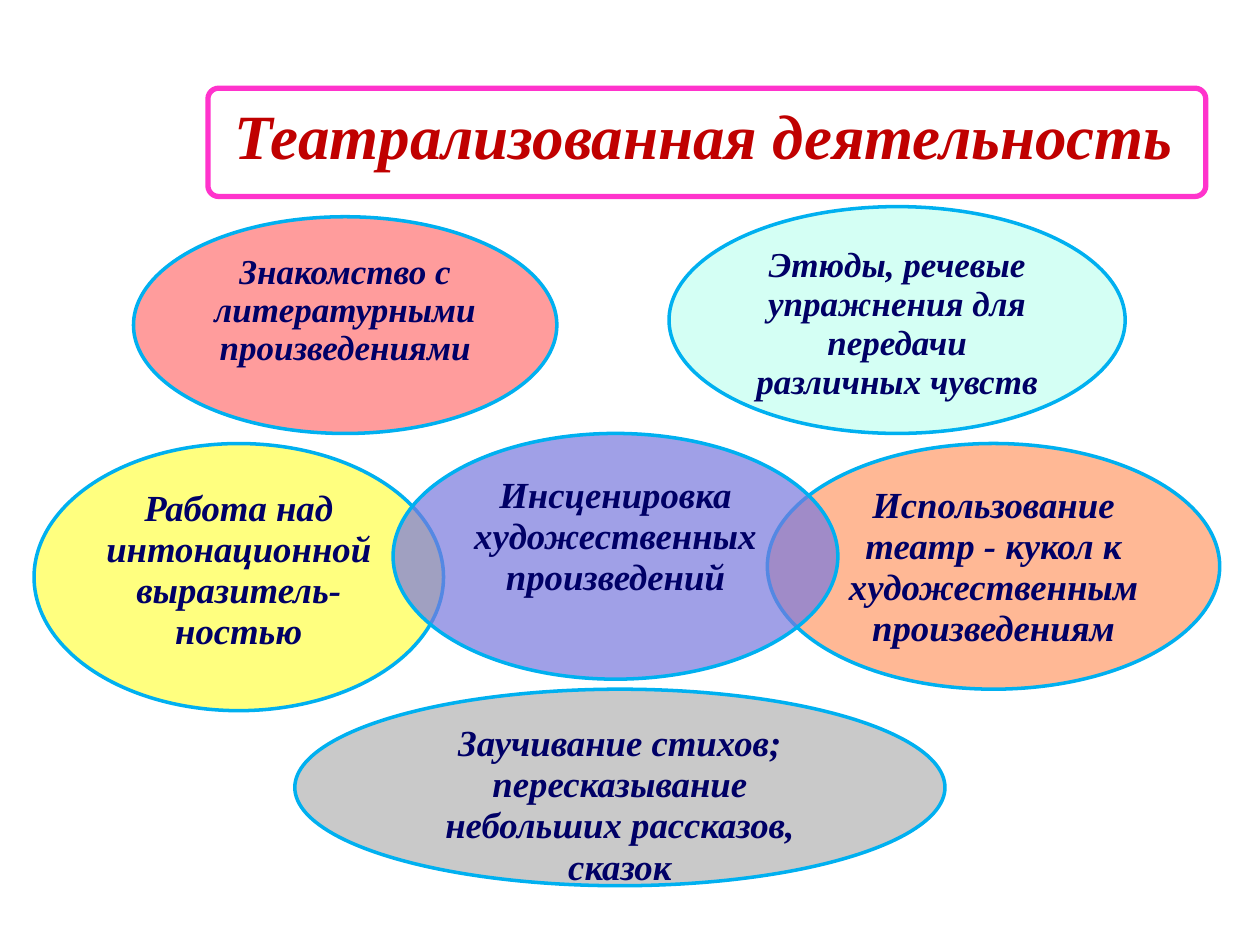
from lxml import etree
from pptx import Presentation
from pptx.dml.color import RGBColor
from pptx.enum.shapes import MSO_SHAPE as Shape
from pptx.enum.text import MSO_ANCHOR as Anchor, MSO_AUTO_SIZE as AutoSize, PP_ALIGN as Align
from pptx.oxml.ns import qn
from pptx.util import Inches, Pt

COLORS = {
    "title": "C00000", "frame": "FF33CC", "text": "000066", "outline": "00B0F0",
    "orange": "FF9966", "yellow": "FFFF00", "violet": "7878DE",
    "mint": "47FFD1", "red": "FF0000", "gray": "A6A6A6",
}

# box, colour, opacity in percent, text size, line spacing, paragraphs
ACTIVITIES = [
    ((6.09, 3.52, 3.59, 1.95), "orange", 69, 21, 0.93,
     ["Использование театр - кукол к художественным произведениям"]),
    ((0.27, 3.52, 3.25, 2.12), "yellow", 50, 21, 0.93,
     ["Работа над", "интонационной выразитель-ностью"]),
    ((3.12, 3.44, 3.53, 1.95), "violet", 70, 21, 0.93,
     ["Инсценировка", "художественных произведений"]),
    ((5.31, 1.64, 3.62, 1.8), "mint", 23, 20, 0.93,
     ["Этюды, речевые упражнения для передачи различных чувств"]),
    ((1.06, 1.72, 3.36, 1.72), "red", 39, 20, 0.9,
     ["Знакомство с литературными произведениями"]),
    ((2.34, 5.47, 5.16, 1.56), "gray", 60, 21, 0.93,
     ["Заучивание стихов;", "пересказывание небольших рассказов, сказок"]),
]


def rgb(name):
    return RGBColor.from_string(COLORS[name])


def write_text(frame, paragraphs, *, size, color, spacing, anchor, side_inset):
    frame.word_wrap = True
    frame.auto_size = AutoSize.NONE
    frame.vertical_anchor = anchor
    frame.margin_left = frame.margin_right = Inches(side_inset)
    for index, text in enumerate(paragraphs):
        paragraph = frame.paragraphs[0] if index == 0 else frame.add_paragraph()
        paragraph.alignment = Align.CENTER
        paragraph.line_spacing = spacing
        paragraph.space_before = Pt(0)
        run = paragraph.add_run()
        run.text = text
        font = run.font
        font.name = "Times New Roman"
        font.size = Pt(size)
        font.bold = font.italic = True
        font.color.rgb = rgb(color)


def add_outlined(slide, preset, box, *, line, width):
    shape = slide.shapes.add_shape(preset, *map(Inches, box))
    shape.shadow.inherit = False
    shape.line.color.rgb = rgb(line)
    shape.line.width = Pt(width)
    return shape


def set_opacity(shape, percent):
    color = shape.fill._xPr.find(qn("a:solidFill"))[0]
    etree.SubElement(color, qn("a:alpha"), val=str(percent * 1000))


def add_heading(slide, box):
    left, top, width, height = box
    frame = add_outlined(slide, Shape.ROUNDED_RECTANGLE, box, line="frame", width=3)
    frame.adjustments[0] = 0.1
    frame.fill.background()

    title = slide.shapes.title
    title.left, title.top = Inches(left - 0.09), Inches(top + 0.08)
    title.width, title.height = Inches(width + 0.13), Inches(height - 0.21)
    text = title.text_frame
    text.margin_top = text.margin_bottom = Inches(0.23)
    write_text(text, ["Театрализованная деятельность"], size=36, color="title",
               spacing=0.9, anchor=Anchor.MIDDLE, side_inset=0.23)


def add_activity(slide, box, color, opacity, size, spacing, paragraphs):
    oval = add_outlined(slide, Shape.OVAL, box, line="outline", width=2)
    oval.fill.solid()
    oval.fill.fore_color.rgb = rgb(color)
    set_opacity(oval, opacity)
    write_text(oval.text_frame, paragraphs, size=size, color="text",
               spacing=spacing, anchor=Anchor.TOP, side_inset=0.08)


def main():
    deck = Presentation()
    deck.slide_width, deck.slide_height = Inches(10), Inches(7.5)
    slide = deck.slides.add_slide(deck.slide_layouts[5])
    add_heading(slide, (1.65, 0.7, 7.92, 0.86))
    for activity in ACTIVITIES:
        add_activity(slide, *activity)
    deck.save("out.pptx")


if __name__ == "__main__":
    main()
